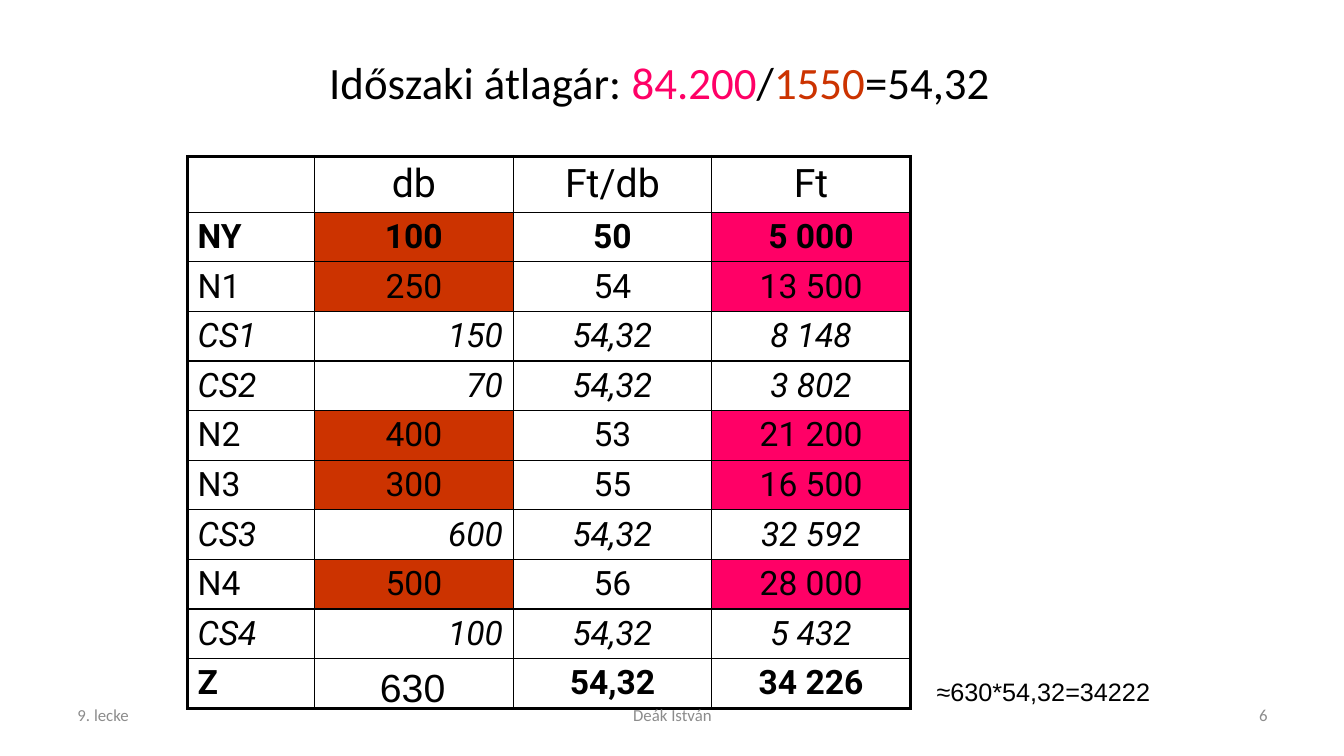
from dataclasses import dataclass

from lxml.etree import SubElement
from pptx import Presentation
from pptx.dml.color import RGBColor
from pptx.enum.text import MSO_ANCHOR as Anchor, MSO_AUTO_SIZE as AutoSize, PP_ALIGN as Align
from pptx.oxml.ns import qn
from pptx.util import Inches, Pt

COLORS = {"ink": "000000", "quantity": "CC3300", "value": "FF0066", "footer": "8C8C8C"}
THIN, THICK = 1, 2.25


@dataclass
class Movement:
    label: str
    quantity: str
    price: str
    value: str

    @property
    def issued(self) -> bool:
        return self.label.startswith("CS")

    @property
    def received(self) -> bool:
        return self.label.startswith("N")

    @property
    def balance(self) -> bool:
        return self.label in ("NY", "Z")


@dataclass
class Note:
    text: str
    left: float
    top: float
    width: float
    height: float
    size: float
    font: str = "Calibri"
    color: str = "footer"
    align: Align = Align.LEFT
    anchor: Anchor = Anchor.MIDDLE
    wrap: bool = True


MOVEMENTS = [
    Movement("NY", "100", "50", "5 000"),
    Movement("N1", "250", "54", "13 500"),
    Movement("CS1", "150", "54,32", "8 148"),
    Movement("CS2", "70", "54,32", "3 802"),
    Movement("N2", "400", "53", "21 200"),
    Movement("N3", "300", "55", "16 500"),
    Movement("CS3", "600", "54,32", "32 592"),
    Movement("N4", "500", "56", "28 000"),
    Movement("CS4", "100", "54,32", "5 432"),
    Movement("Z", "", "54,32", "34 226"),
]
HEADINGS = ["", "db", "Ft/db", "Ft"]
TITLE_PARTS = [
    ("Időszaki átlagár: ", "ink"),
    ("84.200", "value"),
    ("/", "ink"),
    ("1550", "quantity"),
    ("=54,32", "ink"),
]
NOTES = [
    Note("9. lecke", 0.67, 6.83, 3.11, 0.52, 12),
    Note("Deák István", 4.56, 6.83, 4.22, 0.52, 12, align=Align.CENTER),
    Note("6", 9.56, 6.83, 3.11, 0.52, 12, align=Align.RIGHT),
    Note("630", 3.67, 6.53, 0.85, 0.57, 28, "Arial", "ink", anchor=Anchor.TOP, wrap=False),
    Note("≈630*54,32=34222", 9.19, 6.66, 2.32, 0.4, 18, "Arial", "ink",
         anchor=Anchor.TOP, wrap=False),
]


def add_text(paragraph, text: str, *, size: float, font: str, color: str = "ink",
             bold: bool = False, italic: bool = False, align: Align = Align.LEFT) -> None:
    paragraph.alignment = align
    run = paragraph.add_run()
    run.text = text
    run.font.size = Pt(size)
    run.font.name = font
    run.font.bold = bold
    run.font.italic = italic
    run.font.color.rgb = RGBColor.from_string(COLORS[color])


def set_borders(cell, widths: dict[str, float]) -> None:
    properties = cell._tc.get_or_add_tcPr()
    for position, (side, width) in enumerate(widths.items()):
        border = properties.makeelement(qn(f"a:ln{side}"), {"w": str(Pt(width))})
        paint = SubElement(border, qn("a:solidFill"))
        SubElement(paint, qn("a:srgbClr"), val=COLORS["ink"])
        properties.insert(position, border)


def add_title(slide) -> None:
    title = slide.shapes.title
    title.left, title.top = Inches(2.17), Inches(0.42)
    title.width, title.height = Inches(9), Inches(0.77)
    frame = title.text_frame
    frame.auto_size = AutoSize.NONE
    frame.vertical_anchor = Anchor.MIDDLE
    frame.margin_right = Inches(0.36)
    for text, color in TITLE_PARTS:
        add_text(frame.paragraphs[0], text, size=32, font="Calibri", color=color,
                 align=Align.CENTER)


def fill_cell(cell, text: str, column: int, movement: Movement | None) -> None:
    cell.fill.background()
    if movement and movement.received and column in (1, 3):
        cell.fill.solid()
        shade = COLORS["quantity" if column == 1 else "value"]
        cell.fill.fore_color.rgb = RGBColor.from_string(shade)
    if not text:
        return
    align = Align.LEFT if column == 0 else Align.CENTER
    if movement and movement.issued and column == 1:
        align = Align.RIGHT
    add_text(cell.text_frame.paragraphs[0], text, size=24 if movement else 28, font="Roboto",
             bold=bool(movement and movement.balance),
             italic=bool(movement and movement.issued), align=align)


def add_ledger(slide) -> None:
    rows = [(None, HEADINGS)]
    rows += [(m, [m.label, m.quantity, m.price, m.value]) for m in MOVEMENTS]
    ledger = slide.shapes.add_table(len(rows), len(HEADINGS), Inches(1.86), Inches(1.55),
                                    Inches(7.17), Inches(0.44 * len(rows))).table
    ledger.first_row = ledger.horz_banding = False
    for column, width in zip(ledger.columns, (1.26, 1.97, 1.97, 1.97)):
        column.width = Inches(width)
    last_row, last_column = len(rows) - 1, len(HEADINGS) - 1
    for r, (movement, texts) in enumerate(rows):
        ledger.rows[r].height = Inches(0.44)
        for c, text in enumerate(texts):
            cell = ledger.cell(r, c)
            fill_cell(cell, text, c, movement)
            outer = {"L": c == 0, "R": c == last_column, "T": r == 0, "B": r == last_row}
            set_borders(cell, {side: THICK if edge else THIN for side, edge in outer.items()})


def add_note(slide, note: Note) -> None:
    box = slide.shapes.add_textbox(Inches(note.left), Inches(note.top),
                                   Inches(note.width), Inches(note.height))
    frame = box.text_frame
    frame.word_wrap = note.wrap
    frame.vertical_anchor = note.anchor
    add_text(frame.paragraphs[0], note.text, size=note.size, font=note.font,
             color=note.color, align=note.align)


def main() -> None:
    presentation = Presentation()
    presentation.slide_width, presentation.slide_height = Inches(13.33), Inches(7.5)
    slide = presentation.slides.add_slide(presentation.slide_layouts[5])
    add_title(slide)
    add_ledger(slide)
    for note in NOTES:
        add_note(slide, note)
    presentation.save("out.pptx")


if __name__ == "__main__":
    main()
